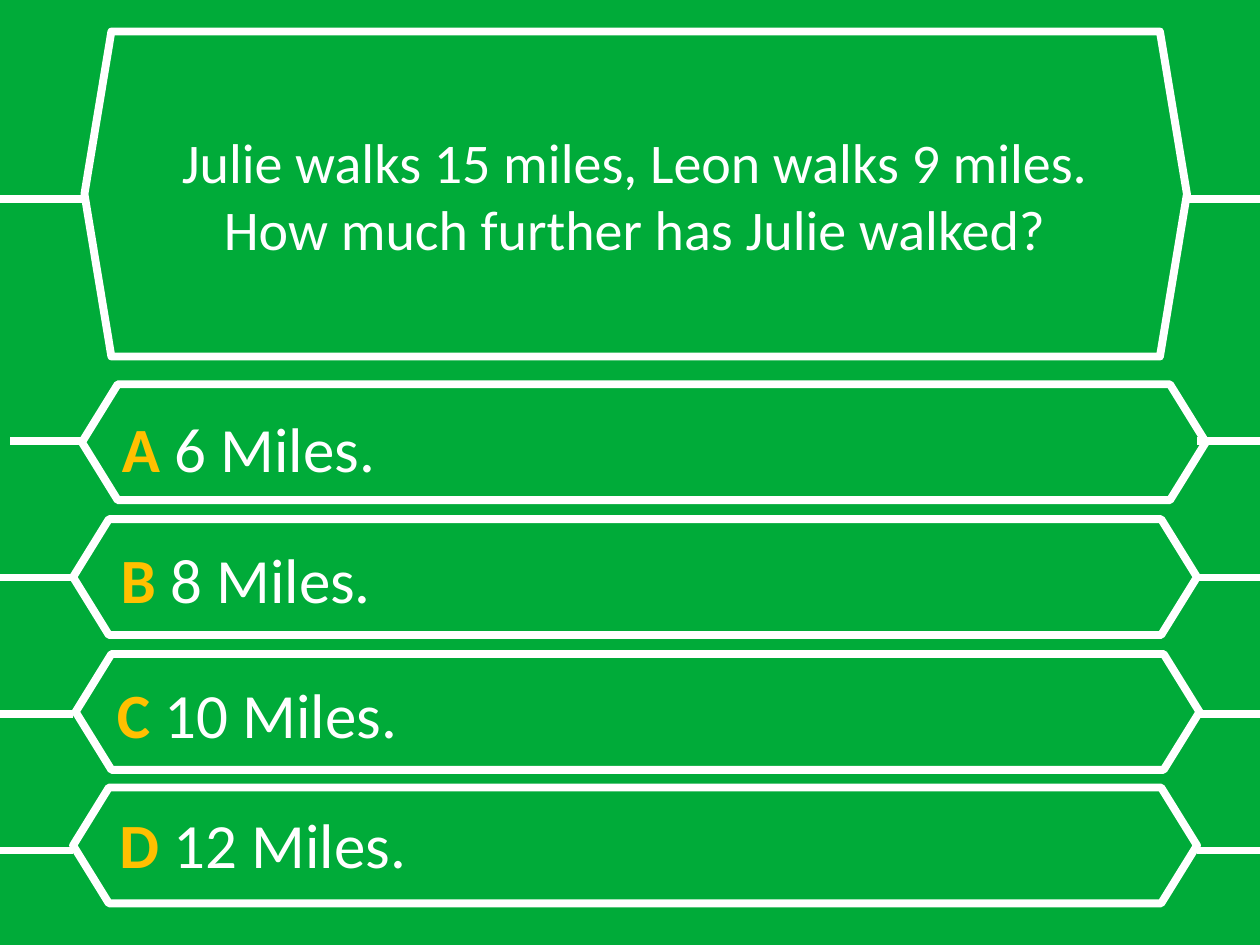
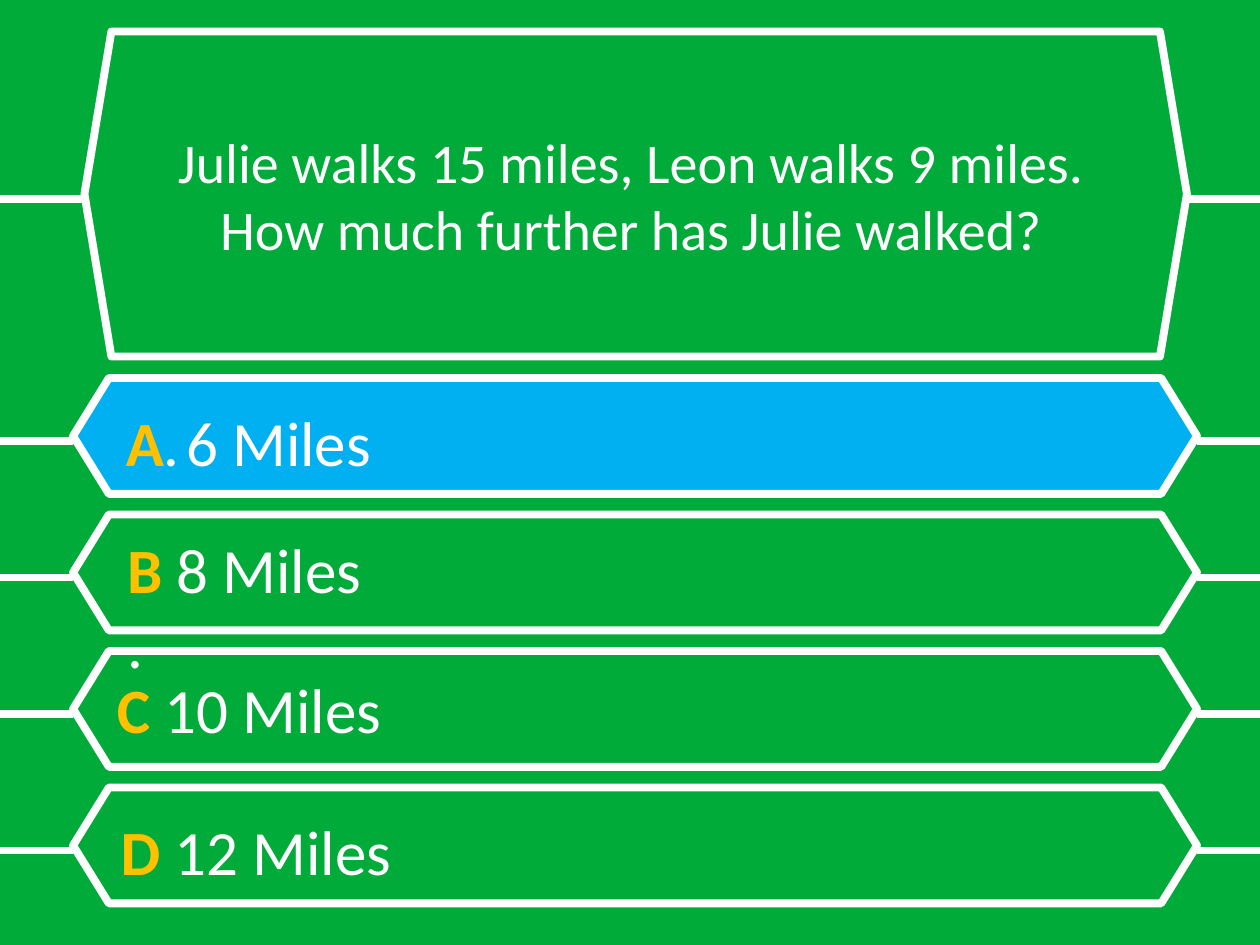
"""Build a quiz question slide and its answer slide."""
from lxml import etree
from pptx import Presentation
from pptx.dml.color import RGBColor
from pptx.enum import shapes, text
from pptx.oxml.ns import qn
from pptx.util import Inches, Pt

GREEN, WHITE, GOLD, BLUE = "00AB39", "FFFFFF", "FFC000", "00B0F0"
FONT = "Calibri"
QUESTION = ("Julie walks 15 miles, Leon walks 9 miles.",
            "How much further has Julie walked?")
QUESTION_BOX = (0.67, 0.25, 8.75, 2.58)
QUESTION_LINE_Y = 1.58
ANSWER_SIZE = (8.92, 0.92)
FIRST_LINE_Y, LINE_STEP = 3.5, 3.25 / 3
LEFT_END, RIGHT_START, SLIDE_WIDTH = 0.58, 9.5, 10

# Labels are (left, top, width, height, paragraphs); a paragraph is (letter, answer).
SLIDES = [
    {
        "title": (0.83, 0.42, 8.42, 2.25),
        "answers": [(0.65, 3.05), (0.58, 4.12), (0.6, 5.19), (0.58, 6.25)],
        "correct": None,
        "first_line_shift": 0.08,
        "labels": [
            (0.87, 3.2, 3.07, 0.71, [("A ", "6 Miles.")]),
            (0.86, 4.24, 3.07, 0.71, [("B ", "8 Miles.")]),
            (0.83, 5.31, 3.07, 0.71, [("C ", "10 Miles.")]),
            (0.85, 6.34, 3.07, 0.71, [("D ", "12 Miles.")]),
        ],
    },
    {
        "title": (0.76, 0.92, 8.5, 1.25),
        "answers": [(0.58, 3 + i * LINE_STEP) for i in range(4)],
        "correct": 0,
        "first_line_shift": 0,
        "labels": [
            (0.9, 3.15, 8.59, 0.71, [("A", ".")]),
            (1.38, 3.15, 5.04, 0.71, [("", "6 Miles")]),
            (0.91, 4.16, 8.59, 1.92, [("B ", "8 Miles"), ("", ".")]),
            (0.83, 5.27, 8.59, 0.71, [("C ", "10 Miles")]),
            (0.86, 6.4, 8.59, 0.71, [("D", " 12 Miles")]),
        ],
    },
]


def rgb(color):
    """Turn a hex string into a colour."""
    return RGBColor.from_string(color)


def inches(*values):
    """Turn plain numbers into lengths."""
    return [Inches(v) for v in values]


def style_line(sp):
    """Give a shape or connector the thick white line."""
    sp.line.color.rgb = rgb(WHITE)
    sp.line.width = Pt(4.5)


def add_hexagon(s, box, point, fill=None):
    """Add an outlined hexagon, filled on request."""
    sp = s.shapes.add_shape(shapes.MSO_SHAPE.HEXAGON, *inches(*box))
    sp.adjustments[0] = point
    sp.shadow.inherit = False
    style_line(sp)
    if fill:
        sp.fill.solid()
        sp.fill.fore_color.rgb = rgb(fill)
    else:
        sp.fill.background()


def add_line(s, x1, x2, y):
    """Add a horizontal white line."""
    line = s.shapes.add_connector(shapes.MSO_CONNECTOR.STRAIGHT, *inches(x1, y, x2, y))
    style_line(line)
    etree.SubElement(line._element.spPr, qn("a:effectLst"))


def add_run(p, words, size, color=WHITE, bold=False):
    """Add one formatted run."""
    r = p.add_run()
    r.text = words
    r.font.name, r.font.size, r.font.bold = FONT, Pt(size), bold
    r.font.color.rgb = rgb(color)


def set_title(s, box):
    """Place the question in the title placeholder."""
    sp = s.shapes.title
    sp.left, sp.top, sp.width, sp.height = inches(*box)
    tf = sp.text_frame
    tf.auto_size = text.MSO_AUTO_SIZE.NONE
    tf.vertical_anchor = text.MSO_ANCHOR.MIDDLE
    p = tf.paragraphs[0]
    p.alignment = text.PP_ALIGN.CENTER
    for i, words in enumerate(QUESTION):
        if i:
            p.add_line_break()
        add_run(p, words, 32)


def add_label(s, box, paragraphs):
    """Add an answer label with a gold letter."""
    tf = s.shapes.add_textbox(*inches(*box)).text_frame
    tf.word_wrap = True
    tf.auto_size = text.MSO_AUTO_SIZE.SHAPE_TO_FIT_TEXT
    for i, (letter, answer) in enumerate(paragraphs):
        p = tf.add_paragraph() if i else tf.paragraphs[0]
        if letter:
            add_run(p, letter, 36, GOLD, True)
        add_run(p, answer, 36)


def add_slide(prs, content):
    """Build one quiz slide."""
    s = prs.slides.add_slide(prs.slide_layouts[5])
    s.background.fill.solid()
    s.background.fill.fore_color.rgb = rgb(GREEN)
    set_title(s, content["title"])

    add_hexagon(s, QUESTION_BOX, 0.083)
    left, _, width, _ = QUESTION_BOX
    add_line(s, left, 0, QUESTION_LINE_Y)
    add_line(s, SLIDE_WIDTH, left + width, QUESTION_LINE_Y)

    for i, corner in enumerate(content["answers"]):
        fill = BLUE if i == content["correct"] else None
        add_hexagon(s, corner + ANSWER_SIZE, 0.309, fill)
        y = FIRST_LINE_Y + i * LINE_STEP
        shift = 0 if i else content["first_line_shift"]
        add_line(s, LEFT_END + shift, shift, y)
        add_line(s, SLIDE_WIDTH, RIGHT_START, y)

    for *box, paragraphs in content["labels"]:
        add_label(s, box, paragraphs)


def main():
    """Build and save the presentation."""
    prs = Presentation()
    prs.slide_width, prs.slide_height = inches(SLIDE_WIDTH, 7.5)
    for content in SLIDES:
        add_slide(prs, content)
    prs.save("out.pptx")


if __name__ == "__main__":
    main()
